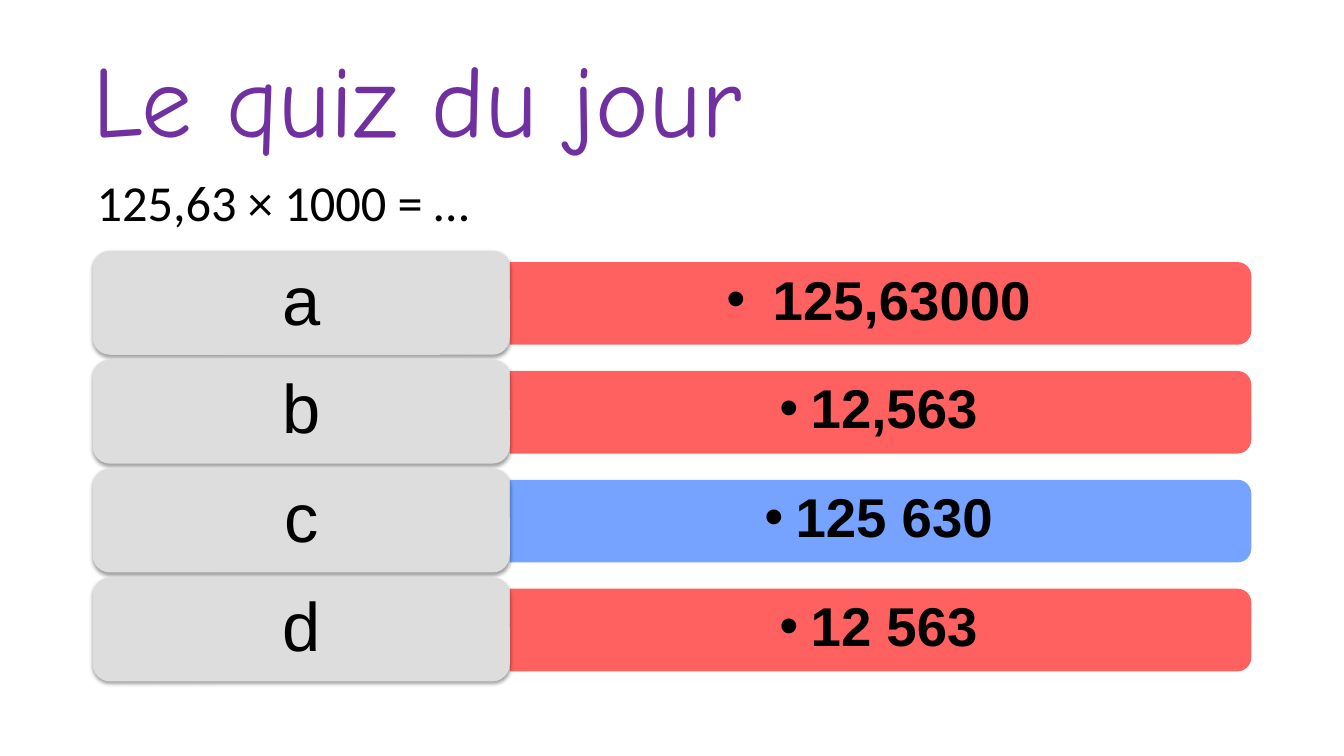
from lxml import etree
from pptx import Presentation
from pptx.dml.color import RGBColor
from pptx.enum.shapes import MSO_SHAPE
from pptx.enum.text import MSO_ANCHOR, MSO_AUTO_SIZE, PP_ALIGN
from pptx.oxml.ns import qn
from pptx.util import Emu, Pt

PX = 9144  # one px is a hundredth of an inch
TILE, BAR = MSO_SHAPE.ROUNDED_RECTANGLE, MSO_SHAPE.ROUND_2_SAME_RECTANGLE
LEFT, CENTER = PP_ALIGN.LEFT, PP_ALIGN.CENTER
MIDDLE, TOP = MSO_ANCHOR.MIDDLE, MSO_ANCHOR.TOP
NO_FIT = MSO_AUTO_SIZE.NONE

COLORS = {"title": "7030A0", "text": "000000", "tile": "DDDDDD",
          "wrong": "FF5050", "right": "6699FF"}


def px(value):
    return Emu(value * PX)


def write(frame, text, *, size, font="Arial", color="text", bold=False, align=CENTER,
          anchor=MIDDLE, insets=(0, 0, 0, 0), spacing=0.9, wrap=True):
    """Put one formatted paragraph in a text frame and return it."""
    frame.auto_size = NO_FIT
    frame.word_wrap = wrap
    frame.vertical_anchor = anchor
    (frame.margin_left, frame.margin_top,
     frame.margin_right, frame.margin_bottom) = map(px, insets)
    paragraph = frame.paragraphs[0]
    paragraph.alignment = align
    paragraph.line_spacing = spacing
    run = paragraph.add_run()
    run.text = text
    run.font.name = font
    run.font.size = Pt(size)
    run.font.bold = bold
    run.font.color.rgb = RGBColor.from_string(COLORS[color])
    return paragraph


class QuizSlide:
    def __init__(self, deck):
        self.slide = deck.slides.add_slide(deck.slide_layouts[5])

    def title(self, text, x, y, w, h, **style):
        heading = self.slide.shapes.title
        heading.left, heading.top, heading.width, heading.height = map(px, (x, y, w, h))
        write(heading.text_frame, text, **style)

    def text(self, text, x, y, w, h, **style):
        box = self.slide.shapes.add_textbox(px(x), px(y), px(w), px(h))
        return write(box.text_frame, text, **style)

    def shape(self, kind, color, x, y, w, h):
        shape = self.slide.shapes.add_shape(kind, px(x), px(y), px(w), px(h))
        shape.shadow.inherit = False
        shape.fill.solid()
        shape.fill.fore_color.rgb = RGBColor.from_string(COLORS[color])
        shape.line.fill.background()
        return shape

    def bar(self, color, x, y, w, h):
        """Bar with round corners on its right end: an upright shape turned by 90°."""
        bar = self.shape(BAR, color, x + (w - h) // 2, y - (w - h) // 2, h, w)
        bar.rotation = 90
        fill_color = bar.fill._xPr.find(qn("a:solidFill"))[0]
        etree.SubElement(fill_color, qn("a:alpha"), val="90000")

    def tile(self, letter, x, y, w, h):
        tile = self.shape(TILE, "tile", x, y, w, h)
        effects = tile._element.spPr.find(qn("a:effectLst"))
        shadow = etree.SubElement(effects, qn("a:outerShdw"), blurRad=str(Pt(3.1)),
                                  dist=str(Pt(1.6)), dir="5400000", rotWithShape="0")
        shade = etree.SubElement(shadow, qn("a:srgbClr"), val=COLORS["text"])
        etree.SubElement(shade, qn("a:alpha"), val="38000")
        write(tile.text_frame, letter, size=49, insets=(20, 10, 20, 10))

    def bullet(self, text, x, y, w, h):
        answer = self.text(text, x, y, w, h, size=39, bold=True, insets=(16, 8, 16, 8))
        props = answer._p.get_or_add_pPr()
        props.set("marL", str(px(31)))
        props.set("indent", str(px(-31)))
        etree.SubElement(props, qn("a:buFont"), typeface="Arial")
        etree.SubElement(props, qn("a:buChar"), char="•")


def main():
    deck = Presentation()
    deck.slide_width, deck.slide_height = px(1334), px(750)
    quiz = QuizSlide(deck)

    # Title
    quiz.title("Le quiz du jour", 92, 27, 1150, 180, size=72.6, font="Comic Neue",
               color="title", align=LEFT, insets=(0, 0, 0, 26))

    # Answers: one row each, a bar with its value and a tile with its letter
    answers = [("a", " 125,63000", "wrong"), ("b", "12,563", "wrong"),
               ("c", "125 630", "right"), ("d", "12 563", "wrong")]
    for row, (letter, value, verdict) in enumerate(answers):
        top = 249 + 108 * row
        quiz.bar(verdict, 506, top + 11, 736, 82)
        quiz.bullet(value, 506, top + 14, 732, 74)
        quiz.tile(letter, 92, top, 414, 103)

    # Question
    quiz.text("125,63 × 1000 = …", 86, 165, 411, 71, size=36, font="Calibri",
              align=LEFT, anchor=TOP, insets=(10, 5, 10, 5), spacing=1.0, wrap=False)

    deck.save("out.pptx")


if __name__ == "__main__":
    main()
